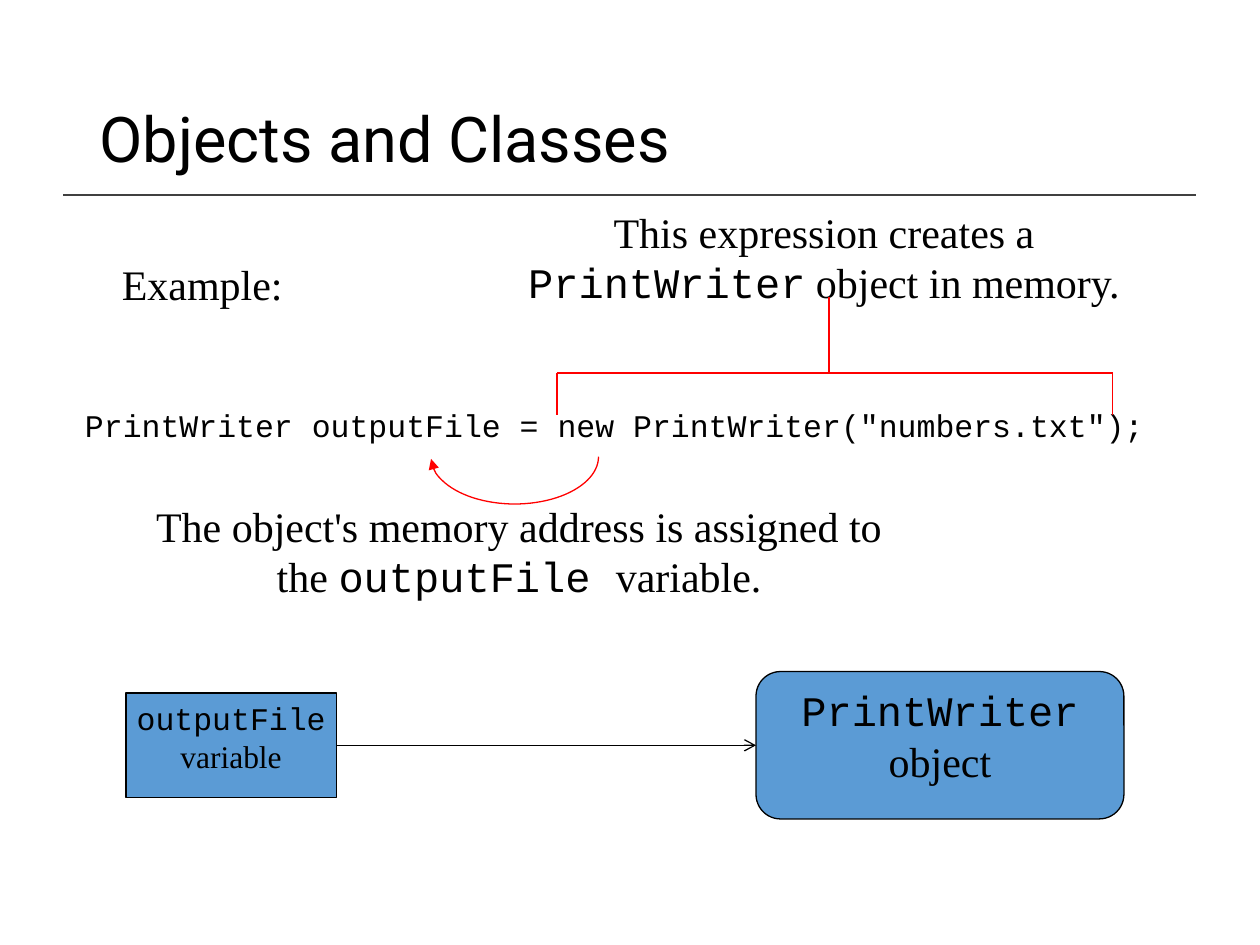
import pptx
import pptx.dml.color
import pptx.enum.shapes
import pptx.enum.text
import pptx.oxml
import pptx.oxml.ns
import pptx.util

Inches = pptx.util.Inches
Pt = pptx.util.Pt
SHAPE = pptx.enum.shapes.MSO_SHAPE
ALIGN = pptx.enum.text.PP_ALIGN
ANCHOR = pptx.enum.text.MSO_ANCHOR
AUTO_SIZE = pptx.enum.text.MSO_AUTO_SIZE

SERIF = "Times New Roman"
CODE = "Courier New"
BLACK, RED, BLUE, GREY = "000000", "FF0000", "5B9BD5", "404040"


def color(value):
    return pptx.dml.color.RGBColor.from_string(value)


class DiagramSlide:
    def __init__(self, slide):
        self.slide = slide
        self.shapes = slide.shapes

    def place(self, shape, box):
        shape.left, shape.top, shape.width, shape.height = map(Inches, box)

    def add_runs(self, frame, paragraphs, size, align=ALIGN.CENTER):
        for index, runs in enumerate(paragraphs):
            paragraph = frame.paragraphs[0] if index == 0 else frame.add_paragraph()
            paragraph.alignment = align
            for words, font in runs:
                run = paragraph.add_run()
                run.text = words
                run.font.name = font
                run.font.size = Pt(size)
                run.font.color.rgb = color(BLACK)

    def title(self, words, box):
        heading = self.shapes.title
        self.place(heading, box)
        frame = heading.text_frame
        frame.auto_size = AUTO_SIZE.NONE
        frame.vertical_anchor = ANCHOR.MIDDLE
        self.add_runs(frame, [[(words, "Roboto")]], 36, ALIGN.LEFT)
        frame.paragraphs[0].line_spacing = 0.9

    def text(self, box, runs, size=24, wrap=True):
        frame = self.shapes.add_textbox(*map(Inches, box)).text_frame
        frame.word_wrap = wrap
        frame.auto_size = AUTO_SIZE.SHAPE_TO_FIT_TEXT
        self.add_runs(frame, [runs], size)

    def box(self, kind, box, paragraphs, size):
        shape = self.shapes.add_shape(kind, *map(Inches, box))
        shape.shadow.inherit = False
        shape.fill.solid()
        shape.fill.fore_color.rgb = color(BLUE)
        self.outline(shape.line, BLACK)
        frame = shape.text_frame
        frame.word_wrap = False
        frame.vertical_anchor = ANCHOR.TOP
        self.add_runs(frame, paragraphs, size)
        return shape

    def outline(self, line, stroke, width=0.75):
        line.color.rgb = color(stroke)
        line.width = Pt(width)

    def arrowhead(self, shape, kind):
        outline = shape._element.spPr.find(pptx.oxml.ns.qn("a:ln"))
        outline.append(pptx.oxml.parse_xml(
            f'<a:tailEnd {pptx.oxml.ns.nsdecls("a")} type="{kind}"/>'))

    def line(self, start, end, stroke, width=0.75):
        connector = self.shapes.add_connector(
            pptx.enum.shapes.MSO_CONNECTOR.STRAIGHT, *map(Inches, start + end))
        self.outline(connector.line, stroke, width)
        connector._element.spPr.append(pptx.oxml.parse_xml(
            f'<a:effectLst {pptx.oxml.ns.nsdecls("a")}/>'))
        return connector

    def link(self, source, target):
        connector = self.line((0, 0), (1, 1), BLACK)
        connector.begin_connect(source, 3)
        connector.end_connect(target, 1)
        self.arrowhead(connector, "arrow")

    def curved_arrow(self, box, rotation, angles):
        arc = self.shapes.add_shape(SHAPE.ARC, *map(Inches, box))
        arc.shadow.inherit = False
        arc.rotation = rotation
        for index, angle in enumerate(angles):
            arc.adjustments[index] = angle * 0.6
        arc.fill.background()
        self.outline(arc.line, RED)
        self.arrowhead(arc, "triangle")


def main():
    presentation = pptx.Presentation()
    presentation.slide_width = Inches(10)
    presentation.slide_height = Inches(7.5)
    page = DiagramSlide(presentation.slides.add_slide(presentation.slide_layouts[5]))

    page.line((0.5, 1.55), (9.49, 1.55), GREY, 1)
    page.title("Objects and Classes", (0.69, 0.4, 8.62, 1.45))
    page.text((0.5, 3.17, 8.75, 0.4),
              [('PrintWriter outputFile = new PrintWriter("numbers.txt");', CODE)], 18)

    variable = page.box(SHAPE.RECTANGLE, (1, 5.5, 1.67, 0.83),
                        [[("outputFile", CODE)], [("variable", SERIF)]], 18)
    instance = page.box(SHAPE.ROUNDED_RECTANGLE, (6, 5.33, 2.92, 1.17),
                        [[("PrintWriter", CODE)], [("object", SERIF)]], 24)
    page.link(variable, instance)

    page.text((4.08, 1.59, 4.92, 0.91),
              [("This expression creates a ", SERIF), ("PrintWriter", CODE),
               (" object in memory.", SERIF)])

    left, right, top, bottom = 4.42, 8.83, 2.96, 3.29
    page.line((left, top), (right, top), RED)
    for side in (left, right):
        page.line((side, bottom), (side, top), RED)
    page.line((6.58, top), (6.58, 2.36), RED)

    page.curved_arrow((3.71, 2.96, 0.75, 1.33), 90, (270, 88.49))
    page.text((1.08, 3.92, 6.08, 0.91),
              [("The object's memory address is assigned to the ", SERIF),
               ("outputFile ", CODE), ("variable.", SERIF)])
    page.text((0.86, 2, 1.49, 0.51), [("Example:", SERIF)], wrap=False)

    presentation.save("out.pptx")


if __name__ == "__main__":
    main()
